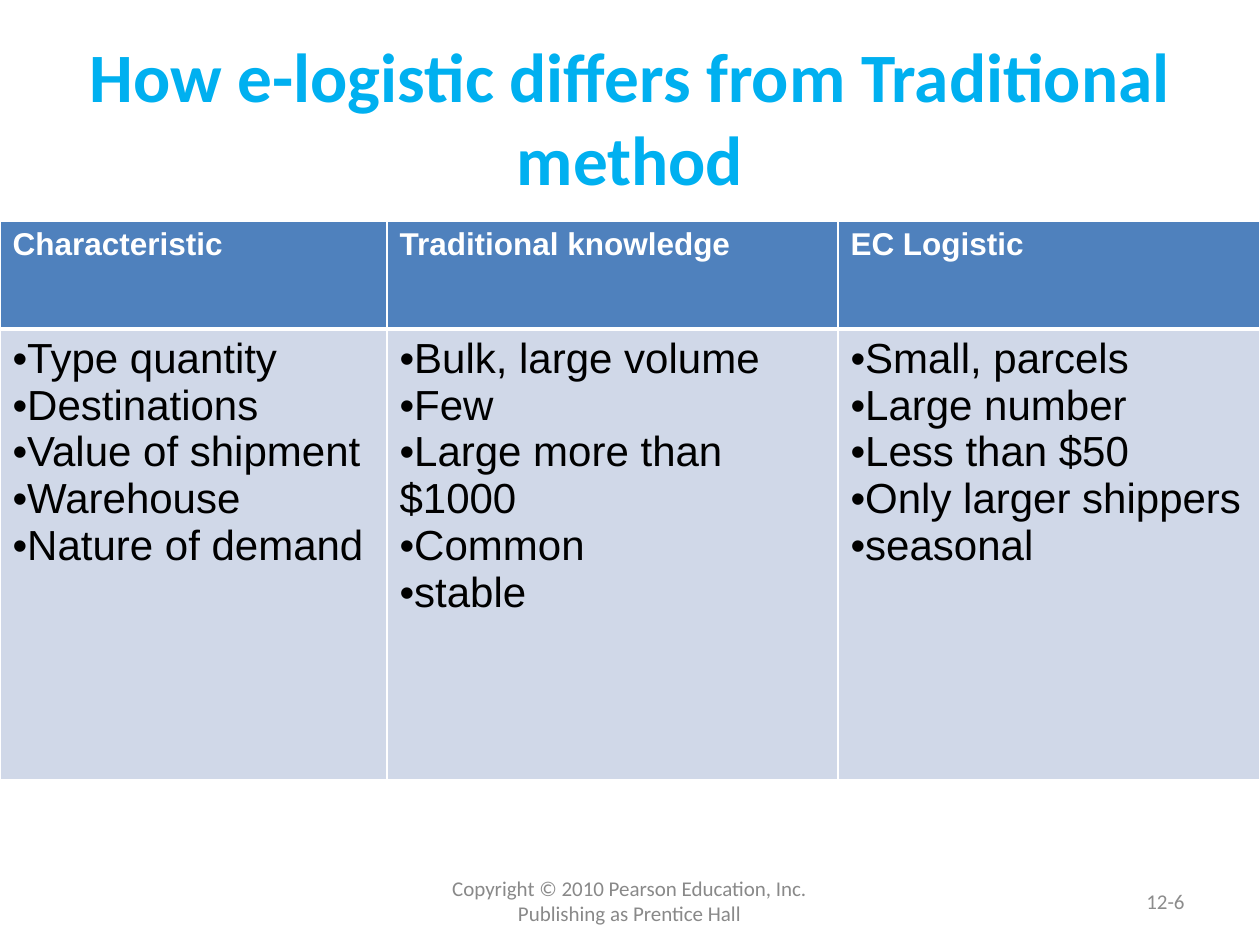
from lxml import etree
from pptx import Presentation
from pptx.dml.color import RGBColor
from pptx.enum.text import MSO_ANCHOR, PP_ALIGN
from pptx.oxml.ns import qn
from pptx.util import Emu, Pt

MIDDLE = MSO_ANCHOR.MIDDLE
CENTER, RIGHT = PP_ALIGN.CENTER, PP_ALIGN.RIGHT
PX = 914400 / 126
TITLE_ONLY = 5


def px(length):
    return Emu(round(length * PX))


def color(value):
    return RGBColor.from_string(value)


class ComparisonSlide:
    """Slide with its style and one method for each kind of element."""

    heading_font, table_font = "Calibri", "Arial"
    accent, header_fill, body_fill = "00B0F0", "4F81BD", "D0D8E8"
    white, black = "FFFFFF", "000000"

    def __init__(self, presentation):
        self.slide = presentation.slides.add_slide(presentation.slide_layouts[TITLE_ONLY])

    def style(self, paragraph, font, size, fill, bold=False):
        paragraph.font.name = font
        paragraph.font.size = Pt(size)
        paragraph.font.bold = bold
        paragraph.font.color.rgb = color(fill)

    def title(self, text, left, top, width, height):
        title = self.slide.shapes.title
        title.left, title.top, title.width, title.height = map(px, (left, top, width, height))
        frame = title.text_frame
        frame.text = text
        frame.word_wrap = True
        frame.vertical_anchor = MIDDLE
        frame.paragraphs[0].alignment = CENTER
        self.style(frame.paragraphs[0], self.heading_font, 39.6, self.accent, True)

    def footer(self, text, left, top, width, height, alignment, fill):
        box = self.slide.shapes.add_textbox(*map(px, (left, top, width, height)))
        frame = box.text_frame
        frame.text = text
        frame.word_wrap = True
        frame.vertical_anchor = MIDDLE
        frame.paragraphs[0].alignment = alignment
        self.style(frame.paragraphs[0], self.heading_font, 12, fill)

    def border(self, cell, side, width):
        properties = cell._tc.get_or_add_tcPr()
        line = etree.SubElement(properties, qn(f"a:ln{side}"), w=str(Pt(width)))
        fill = etree.SubElement(line, qn("a:solidFill"))
        etree.SubElement(fill, qn("a:srgbClr"), val=self.white)

    def bullet(self, paragraph):
        properties = paragraph._p.get_or_add_pPr()
        etree.SubElement(properties, qn("a:buFont"), typeface=self.table_font)
        etree.SubElement(properties, qn("a:buChar"), char="•")

    def cell(self, cell, lines, is_header):
        thick_side = "B" if is_header else "T"
        for side in "LRTB":
            self.border(cell, side, 3 if side == thick_side else 1)
        cell.fill.solid()
        cell.fill.fore_color.rgb = color(self.header_fill if is_header else self.body_fill)
        cell.text = "\n".join(lines)
        for paragraph in cell.text_frame.paragraphs:
            if is_header:
                self.style(paragraph, self.table_font, 18, self.white, True)
            else:
                self.bullet(paragraph)
                self.style(paragraph, self.table_font, 24, self.black)

    def table(self, columns, left, top, widths, heights):
        frame = self.slide.shapes.add_table(
            len(heights), len(widths), *map(px, (left, top, sum(widths), sum(heights))))
        table = frame.table
        for row, height in zip(table.rows, heights):
            row.height = px(height)
        for index, (heading, items) in enumerate(columns.items()):
            table.columns[index].width = px(widths[index])
            self.cell(table.cell(0, index), [heading], True)
            self.cell(table.cell(1, index), items, False)


def main():
    presentation = Presentation()
    presentation.slide_width, presentation.slide_height = px(1260), px(945)
    slide = ComparisonSlide(presentation)
    slide.title("How e-logistic differs from Traditional method", 63, 37, 1134, 158)
    comparison = {
        "Characteristic": ["Type quantity", "Destinations", "Value of shipment",
                           "Warehouse", "Nature of demand"],
        "Traditional knowledge": ["Bulk, large volume", "Few", "Large more than $1000",
                                  "Common", "stable"],
        "EC Logistic": ["Small, parcels", "Large number", "Less than $50",
                        "Only larger shippers", "seasonal"],
    }
    slide.table(comparison, 0, 221, [387, 451, 422], [108, 451])
    slide.footer("Copyright © 2010 Pearson Education, Inc. Publishing as Prentice Hall",
                 430, 876, 399, 50, CENTER, "898989")
    slide.footer("12-6", 903, 876, 294, 50, RIGHT, "8C8C8C")
    presentation.save("out.pptx")


if __name__ == "__main__":
    main()
